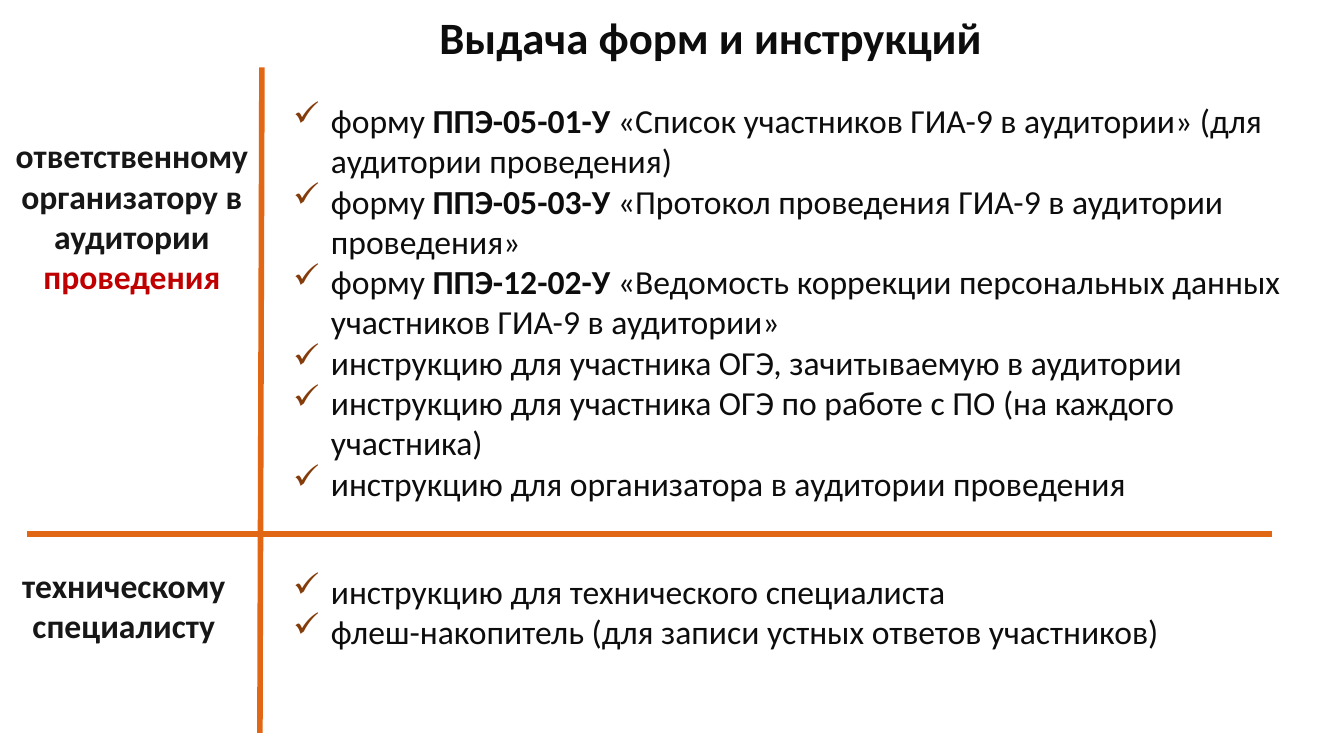
from pptx import Presentation
from pptx.dml.color import RGBColor
from pptx.enum.shapes import MSO_CONNECTOR
from pptx.enum.text import MSO_AUTO_SIZE, PP_ALIGN
from pptx.oxml.ns import qn
from pptx.util import Cm, Pt
from lxml import etree

STRAIGHT = MSO_CONNECTOR.STRAIGHT
CENTER = PP_ALIGN.CENTER
GROW = MSO_AUTO_SIZE.SHAPE_TO_FIT_TEXT

FORMS = [
    ("ППЭ-05-01-У ", "«Список участников ГИА-9 в аудитории» (для аудитории проведения)"),
    ("ППЭ-05-03-У ", "«Протокол проведения ГИА-9 в аудитории проведения»"),
    ("ППЭ-12-02-У ", "«Ведомость коррекции персональных данных участников ГИА-9 в аудитории»"),
]
ORGANIZER_GUIDES = [
    "инструкцию для участника ОГЭ, зачитываемую в аудитории",
    "инструкцию для участника ОГЭ по работе с ПО (на каждого участника)",
    "инструкцию для организатора в аудитории проведения",
]
SPECIALIST_ITEMS = [
    "инструкцию для технического специалиста",
    "флеш-накопитель (для записи устных ответов участников)",
]


def rgb(value):
    return RGBColor.from_string(value)


class HandoutSlide:
    FONT = "Calibri"
    INK = "0D0D0D"
    LABEL = "181717"
    ACCENT = "C00000"
    RULE = "E26714"
    CHECK = "843C0B"
    INDENT = Cm(0.95)

    def __init__(self, deck):
        self.page = deck.slides.add_slide(deck.slide_layouts[6])

    def rule(self, x1, y1, x2, y2):
        line = self.page.shapes.add_connector(STRAIGHT, Cm(x1), Cm(y1), Cm(x2), Cm(y2))
        line.line.color.rgb = rgb(self.RULE)
        line.line.width = Pt(4)
        etree.SubElement(line._element.spPr, qn("a:effectLst"))

    def text_frame(self, left, top, width, height):
        box = self.page.shapes.add_textbox(Cm(left), Cm(top), Cm(width), Cm(height))
        box.text_frame.word_wrap = True
        box.text_frame.auto_size = GROW
        return box.text_frame

    def fill_paragraph(self, para, spans, size, color):
        """Fill a paragraph with (text, bold) spans."""
        para.font.name = self.FONT
        para.font.size = Pt(size)
        para.font.color.rgb = rgb(color)
        for text, bold in spans:
            span = para.add_run()
            span.text = text
            span.font.bold = bold

    def heading(self, place, text, size=24, color=LABEL, accent=""):
        """Add centred bold text, with an optional ending in the accent colour."""
        para = self.text_frame(*place).paragraphs[0]
        para.alignment = CENTER
        self.fill_paragraph(para, [(text, True)], size, color)
        if accent:
            span = para.add_run()
            span.text = accent
            span.font.bold = True
            span.font.color.rgb = rgb(self.ACCENT)

    def checklist(self, place, items):
        frame = self.text_frame(*place)
        for index, spans in enumerate(items):
            para = frame.add_paragraph() if index else frame.paragraphs[0]
            self.fill_paragraph(para, spans, 24, self.INK)
            self.add_check(para)

    def add_check(self, para):
        props = para._p.get_or_add_pPr()
        props.set("marL", str(self.INDENT))
        props.set("indent", str(-self.INDENT))
        color = etree.Element(qn("a:buClr"))
        etree.SubElement(color, qn("a:srgbClr"), val=self.CHECK)
        mark = etree.Element(qn("a:buChar"), char="✓")
        props.insert(0, color)
        props.insert(1, mark)


def main():
    deck = Presentation()
    deck.slide_width, deck.slide_height = Cm(33.87), Cm(19.05)
    slide = HandoutSlide(deck)

    slide.rule(6.6, 1.7, 6.55, 18.47)
    slide.rule(0.69, 13.46, 32.05, 13.46)

    slide.heading((6.55, 0.13, 22.73, 1.62), "Выдача форм и инструкций", 32, slide.INK)
    slide.heading((0.05, 3.28, 6.55, 4.37), "ответственному организатору в аудитории ",
                  accent="проведения")
    slide.heading((0.2, 14.1, 5.84, 2.31), "техническому специалисту")

    forms = [[("форму ", False), (code, True), (title, False)] for code, title in FORMS]
    guides = [[(text, False)] for text in ORGANIZER_GUIDES]
    slide.checklist((7.14, 2.39, 25.93, 10.52), forms + guides)
    slide.checklist((7.14, 14.25, 25.93, 2.31), [[(text, False)] for text in SPECIALIST_ITEMS])

    deck.save("out.pptx")


if __name__ == "__main__":
    main()
